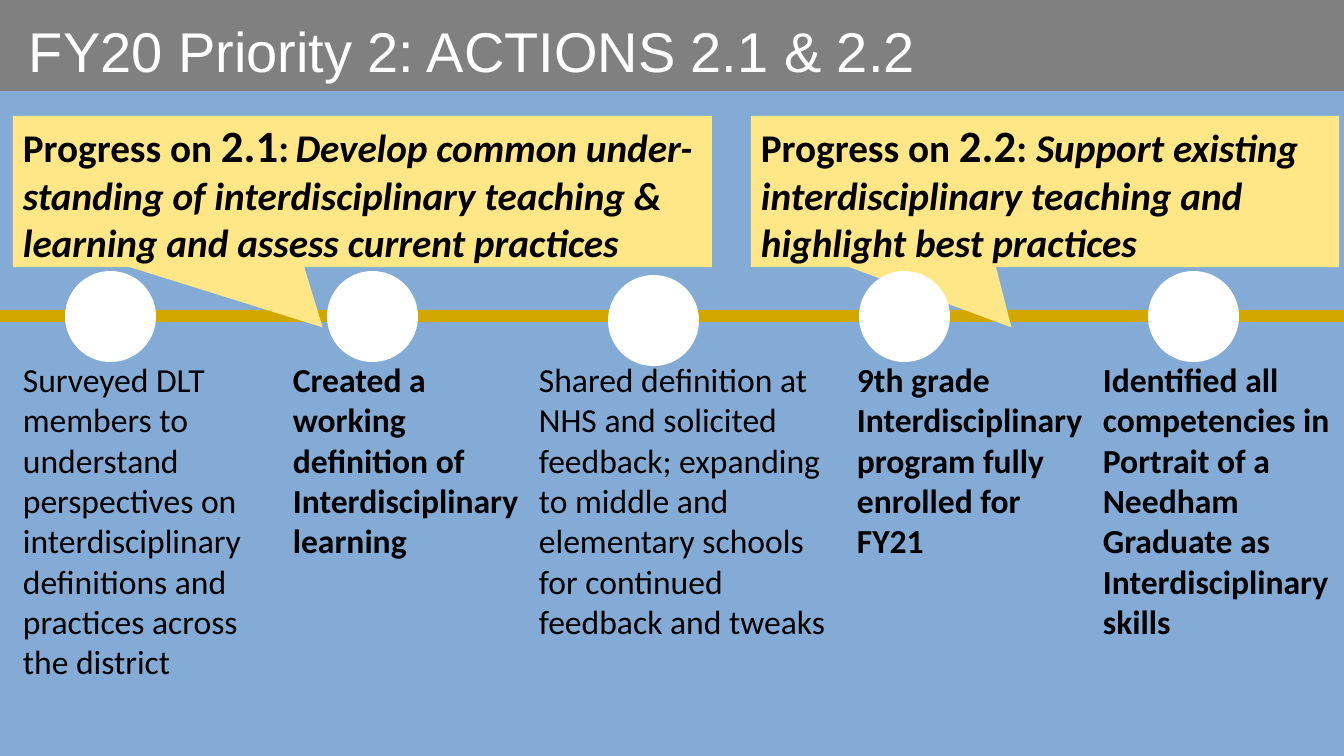
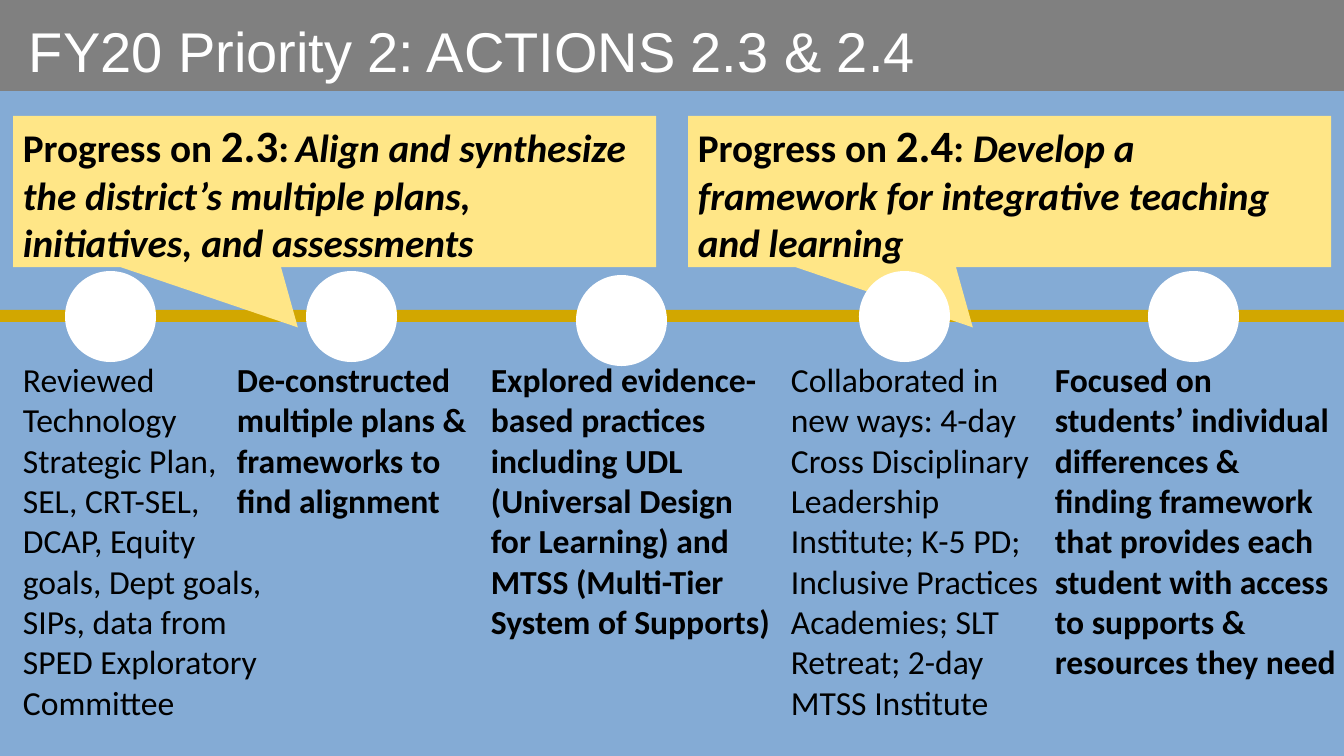
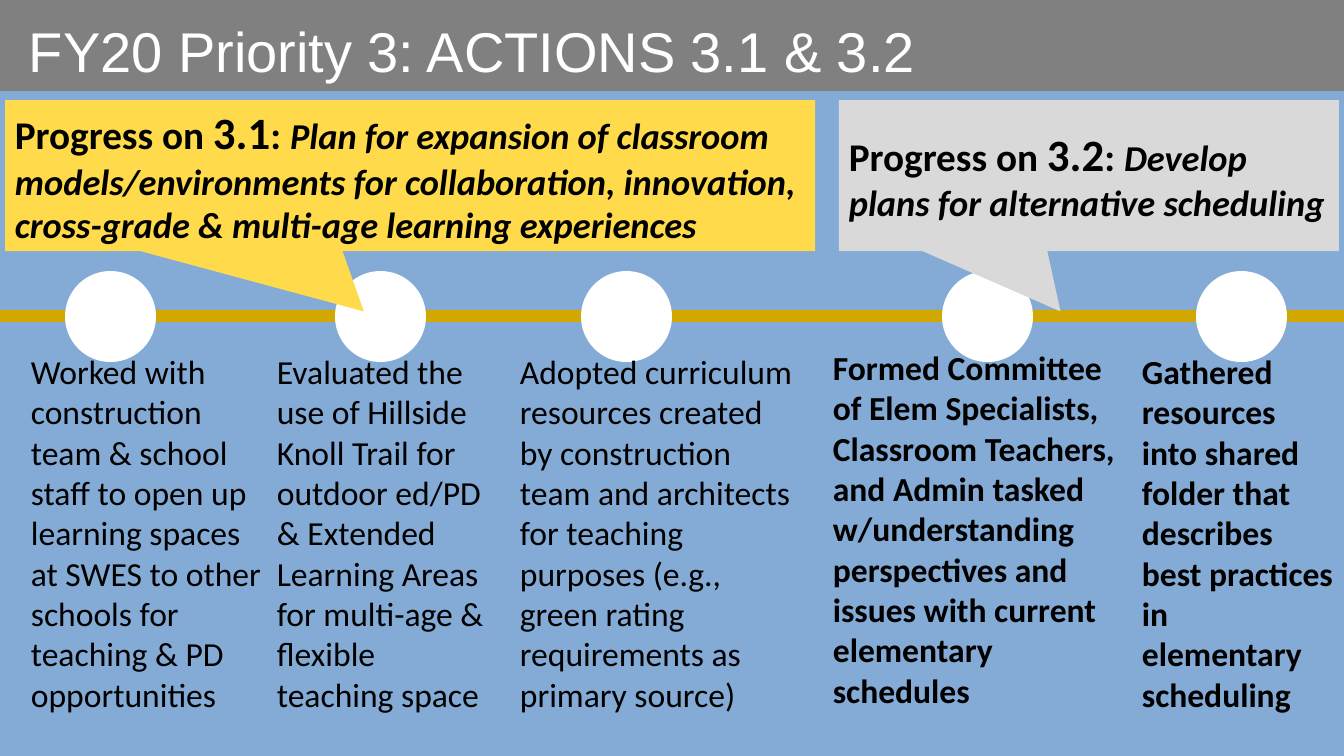
from pptx import Presentation
from pptx.dml.color import RGBColor
from pptx.enum.shapes import MSO_SHAPE
from pptx.enum.text import MSO_ANCHOR
from pptx.util import Pt

RECT, OVAL = MSO_SHAPE.RECTANGLE, MSO_SHAPE.OVAL
CALL = MSO_SHAPE.RECTANGULAR_CALLOUT
TOP, MID = MSO_ANCHOR.TOP, MSO_ANCHOR.MIDDLE

PX = 914400 / 100.8
WIDE, HIGH = 1344, 756
DOT = 91
LINE = 41
HUES = {
    "sky": "84ABD5", "gray": "808080", "gold": "D2A700", "cream": "FFE687",
    "sun": "FFDA4B", "mist": "D9D9D9", "white": "FFFFFF", "black": "000000",
}

# Text styles
HEAD = {"name": "Arial", "size": Pt(40), "bold": False}
PLAIN = {"name": "Calibri", "size": Pt(24), "bold": False}
BOLD = {**PLAIN, "bold": True}
LEAD = {**BOLD, "size": Pt(28)}
MARK = {**BOLD, "size": Pt(32)}

# call: left, width, hue, number, gap size, goal size, goal
# dots: left, top    notes: left, top, width, lines, style, text
SLIDES = [
    {
        "title": "FY20 Priority 2: ACTIONS 2.1 & 2.2",
        "top": 116, "front": False,
        "calls": [
            (13, 699, "cream", "2.1", 20, 28,
             "Develop common under- standing of interdisciplinary teaching & "
             "learning and assess current practices"),
            (751, 588, "cream", "2.2", 28, 28,
             "Support existing interdisciplinary teaching and highlight best practices"),
        ],
        "dots": [(65, 271), (327, 271), (608, 275), (859, 271), (1148, 271)],
        "notes": [
            (13, 354, 254, 8, PLAIN,
             "Surveyed DLT members to understand perspectives on "
             "interdisciplinary definitions and practices across the district"),
            (283, 354, 254, 5, BOLD,
             "Created a working definition of Interdisciplinary learning"),
            (529, 354, 309, 7, PLAIN,
             "Shared definition at NHS and solicited feedback; expanding to "
             "middle and elementary schools for continued feedback and tweaks"),
            (847, 354, 254, 5, BOLD,
             "9th grade Interdisciplinary program fully enrolled for FY21"),
            (1093, 354, 254, 7, BOLD,
             "Identified all competencies in Portrait of a Needham Graduate "
             "as Interdisciplinary skills"),
        ],
    },
    {
        "title": "FY20 Priority 2: ACTIONS 2.3 & 2.4",
        "top": 116, "front": False,
        "calls": [
            (13, 643, "cream", "2.3", 20, 28,
             "Align and synthesize the district’s multiple plans, initiatives, "
             "and assessments"),
            (688, 643, "cream", "2.4", 28, 28,
             "Develop a framework for integrative teaching and learning"),
        ],
        "dots": [(65, 271), (306, 271), (576, 275), (859, 271), (1148, 271)],
        "notes": [
            (13, 354, 270, 9, PLAIN,
             "Reviewed Technology Strategic Plan, SEL, CRT-SEL, DCAP, Equity "
             "goals, Dept goals, SIPs, data from SPED Exploratory Committee"),
            (227, 354, 254, 4, BOLD,
             "De-constructed multiple plans & frameworks to find alignment"),
            (481, 354, 309, 7, BOLD,
             "Explored evidence-based practices including UDL (Universal Design "
             "for Learning) and MTSS (Multi-Tier System of Supports)"),
            (781, 354, 287, 9, PLAIN,
             "Collaborated in new ways: 4-day Cross Disciplinary Leadership "
             "Institute; K-5 PD; Inclusive Practices Academies; SLT Retreat; "
             "2-day MTSS Institute"),
            (1045, 354, 302, 8, BOLD,
             "Focused on students’ individual differences & finding framework "
             "that provides each student with access to supports & resources "
             "they need"),
        ],
    },
    {
        "title": "FY20 Priority 3: ACTIONS 3.1 & 3.2",
        "top": 100, "front": True,
        "calls": [
            (5, 810, "sun", "3.1", 28, 26,
             "Plan for expansion of classroom models/environments for "
             "collaboration, innovation, cross-grade & multi-age learning "
             "experiences"),
            (839, 500, "mist", "3.2", 28, 26,
             "Develop plans for alternative scheduling"),
        ],
        "dots": [(65, 271), (335, 271), (581, 271), (942, 271), (1196, 271)],
        "notes": [
            (21, 346, 262, 9, PLAIN,
             "Worked with construction team & school staff to open up learning "
             "spaces at SWES to other schools for teaching & PD opportunities"),
            (267, 346, 230, 9, PLAIN,
             "Evaluated the use of Hillside Knoll Trail for outdoor ed/PD & "
             "Extended Learning Areas for multi-age & flexible teaching space"),
            (510, 346, 296, 9, PLAIN,
             "Adopted curriculum resources created by construction team and "
             "architects for teaching purposes (e.g., green rating "
             "requirements as primary source)"),
            (823, 342, 309, 9, BOLD,
             "Formed Committee of Elem Specialists, Classroom Teachers, and "
             "Admin tasked w/understanding perspectives and issues with "
             "current elementary schedules"),
            (1132, 346, 212, 9, BOLD,
             "Gathered resources into shared folder that describes best "
             "practices in elementary scheduling"),
        ],
    },
]


def draw(slide, kind, box, hue):
    shape = slide.shapes.add_shape(kind, *[round(n * PX) for n in box])
    shape.shadow.inherit = False
    shape.fill.solid()
    shape.fill.fore_color.rgb = RGBColor.from_string(HUES[hue])
    shape.line.fill.background()
    return shape


def write(slide, box, runs, hue="black", anchor=TOP):
    text = slide.shapes.add_textbox(*[round(n * PX) for n in box])
    frame = text.text_frame
    frame.word_wrap = True
    frame.vertical_anchor = anchor
    for words, style in runs:
        run = frame.paragraphs[0].add_run()
        run.text = words
        run.font.color.rgb = RGBColor.from_string(HUES[hue])
        for key, value in style.items():
            setattr(run.font, key, value)


deck = Presentation()
deck.slide_width, deck.slide_height = round(WIDE * PX), round(HIGH * PX)

for page in SLIDES:
    slide = deck.slides.add_slide(deck.slide_layouts[6])
    back = slide.background.fill
    back.solid()
    back.fore_color.rgb = RGBColor.from_string(HUES["sky"])

    # Title band and time line
    draw(slide, RECT, (0, 310, WIDE, 12), "gold")
    draw(slide, RECT, (0, 0, WIDE, 91), "gray")
    write(slide, (19, 6, 1241, 88), [(page["title"], HEAD)], "white", MID)

    # Dots lie over the callouts unless the callouts are in front
    dots = [(OVAL, (x, y, DOT, DOT), "white") for x, y in page["dots"]]
    calls = [(CALL, (x, page["top"], w, 151), hue)
             for x, w, hue, *_ in page["calls"]]
    for kind, box, hue in dots + calls if page["front"] else calls + dots:
        shape = draw(slide, kind, box, hue)
        if kind == CALL:
            shape.adjustments[0], shape.adjustments[1] = -0.057, 0.9

    # Callout wording
    for x, w, hue, mark, gap, size, goal in page["calls"]:
        runs = [
            ("Progress on ", LEAD), (mark, MARK), (":", LEAD),
            (" ", {**LEAD, "size": Pt(gap)}),
            (goal, {**LEAD, "size": Pt(size), "italic": True}),
        ]
        write(slide, (x, page["top"], w, 151), runs, anchor=MID)

    # Notes under the line
    for x, y, w, rows, style, words in page["notes"]:
        write(slide, (x, y, w, rows * LINE + 9), [(words, style)])

deck.save("out.pptx")
